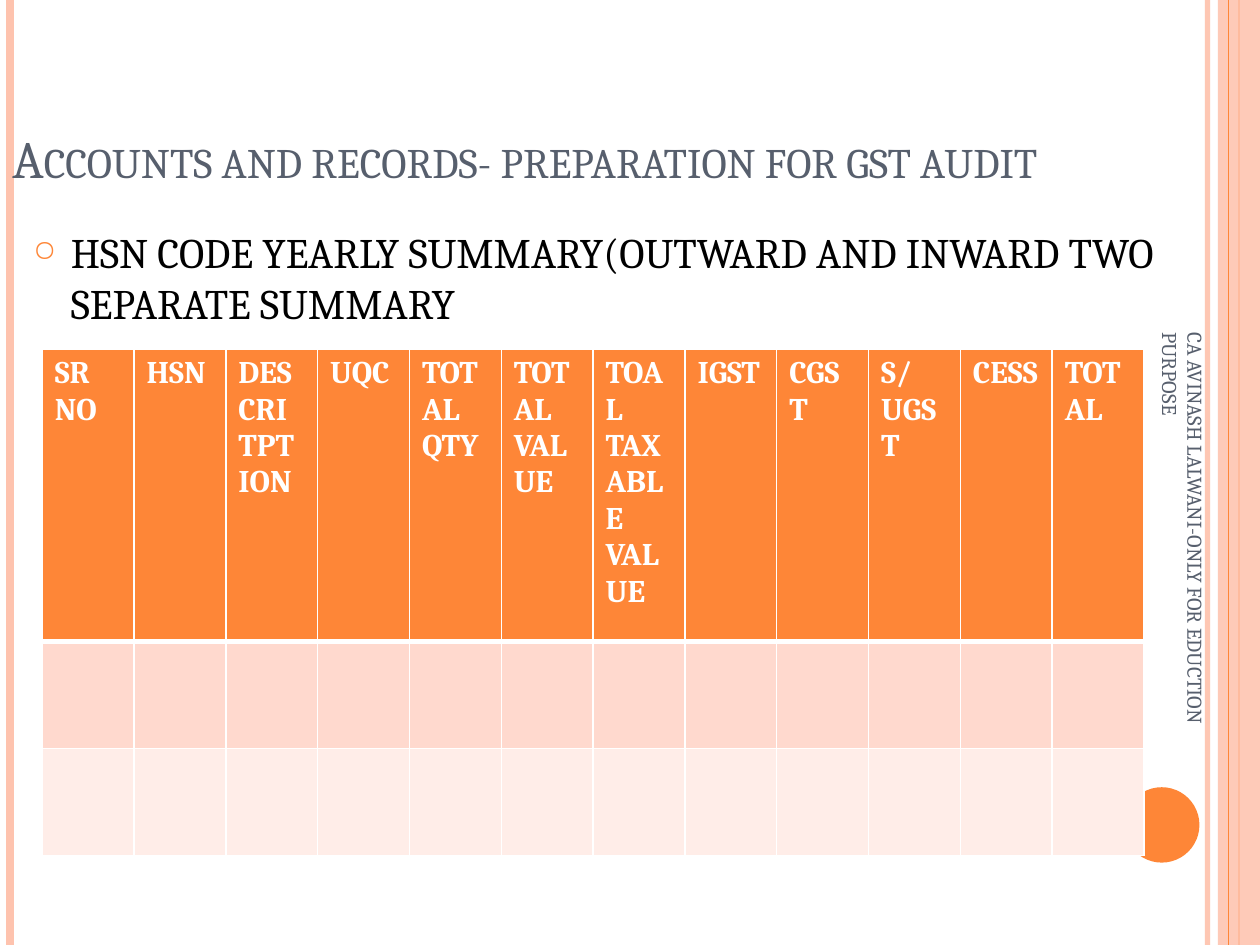
import dataclasses

import pptx
import pptx.dml.color
import pptx.enum.shapes
import pptx.enum.text
import pptx.oxml.ns
import pptx.oxml.xmlchemy
import pptx.util
from lxml import etree

Cm = pptx.util.Cm
Pt = pptx.util.Pt
ANCHOR = pptx.enum.text.MSO_ANCHOR
SHAPE = pptx.enum.shapes.MSO_SHAPE
qn = pptx.oxml.ns.qn


@dataclasses.dataclass(frozen=True)
class Theme:
    font: str = "Cambria"
    accent: str = "FE8637"
    soft: str = "FEC3AE"
    slate: str = "575F6D"
    black: str = "000000"
    white: str = "FFFFFF"
    bands: tuple = ("FFD9CE", "FFEDE8")
    title_size: int = 30
    body_size: int = 24
    table_size: int = 18
    footer_size: int = 12


THEME = Theme()
WIDTH, HEIGHT = 25.4, 19.05
HEADINGS = ["SR NO", "HSN", "DESCRITPTION", "UQC", "TOTAL\nQTY", "TOTAL VALUE",
            "TOAL TAXABLE VALUE", "IGST", "CGST", "S/UGST", "CESS", "TOTAL"]


def rgb(value):
    return pptx.dml.color.RGBColor.from_string(value)


def add_child(parent, tag, **attributes):
    child = etree.SubElement(parent, qn(tag))
    for name, value in attributes.items():
        child.set(name, str(value))
    return child


def set_opacity(fill_parent, percent):
    color = fill_parent.find(".//" + qn("a:srgbClr"))
    add_child(color, "a:alpha", val=percent * 1000)


def write_text(frame, text, size, color, bold=False, small_caps=False):
    """Fill a text frame, one paragraph per line of text."""
    frame.word_wrap = True
    for index, line in enumerate(text.split("\n")):
        para = frame.paragraphs[0] if index == 0 else frame.add_paragraph()
        span = para.add_run()
        span.text = line
        span.font.name = THEME.font
        span.font.size = Pt(size)
        span.font.bold = bold
        span.font.color.rgb = rgb(color)
        if small_caps:
            span.font._element.set("cap", "small")
    return frame.paragraphs[0]


def add_box(page, left, top, width, height, anchor=ANCHOR.TOP):
    box = page.shapes.add_textbox(Cm(left), Cm(top), Cm(width), Cm(height))
    box.text_frame.vertical_anchor = anchor
    return box


def add_rule(page, x, top, height, color, weight, opacity=None):
    rule = page.shapes.add_connector(
        pptx.enum.shapes.MSO_CONNECTOR.STRAIGHT,
        Cm(x), Cm(top), Cm(x), Cm(top + height))
    rule.line.color.rgb = rgb(color)
    rule.line.width = Pt(weight)
    add_child(rule._element.spPr, "a:effectLst")
    if opacity:
        set_opacity(rule._element.spPr, opacity)
    return rule


def add_solid(page, kind, left, top, width, height, color):
    shape = page.shapes.add_shape(kind, Cm(left), Cm(top), Cm(width), Cm(height))
    shape.shadow.inherit = False
    shape.fill.solid()
    shape.fill.fore_color.rgb = rgb(color)
    shape.line.fill.background()
    return shape


def add_frame(page, left, top, width, height):
    """Vertical rules, side band and disc around the page."""
    right = left + width
    add_rule(page, right - 1.06, top, height, THEME.soft, 3, opacity=93)
    add_rule(page, left + 0.2, top, height, THEME.soft, 4.5)
    center_rule = add_rule(page, right - 0.42, top, height, THEME.accent, 1.5)
    band = add_solid(page, SHAPE.RECTANGLE, right - 0.85, top, 0.85, height,
                     THEME.soft)
    set_opacity(band._element.spPr, 87)
    center_rule.begin_connect(band, 0)
    center_rule.end_connect(band, 2)
    add_rule(page, right - 0.64, top, height, THEME.accent, 0.75)
    add_solid(page, SHAPE.OVAL, right - 2.74, top + 15.87, 1.52, 1.52, THEME.accent)


def add_title(page, left, top, width, height):
    box = add_box(page, left, top, width, height, ANCHOR.BOTTOM)
    write_text(box.text_frame, "Accounts and records- preparation for gst audit",
               THEME.title_size, THEME.slate, small_caps=True)


def add_body(page, left, top, width, height):
    box = add_box(page, left, top, width, height)
    para = write_text(
        box.text_frame,
        "HSN CODE YEARLY SUMMARY(OUTWARD AND INWARD TWO SEPARATE SUMMARY",
        THEME.body_size, THEME.black)
    para.space_before = Pt(6)
    layout = para._p.get_or_add_pPr()
    layout.set("marL", str(Cm(0.76)))
    layout.set("indent", str(-Cm(0.76)))
    add_child(add_child(layout, "a:buClr"), "a:srgbClr", val=THEME.accent)
    add_child(layout, "a:buSzPct", val=70000)
    add_child(layout, "a:buChar", char="○")


def add_footer(page, left, top, width, height):
    """Text turned a quarter, inside the upright box given."""
    shift = (height - width) / 2
    box = add_box(page, left - shift, top + shift, height, width, ANCHOR.MIDDLE)
    box.rotation = 90
    write_text(box.text_frame, "CA AVINASH LALWANI-ONLY FOR EDUCTION PURPOSE",
               THEME.footer_size, THEME.slate)


def style_cell(cell, fill, top_weight, bottom_weight):
    layout = cell._tc.get_or_add_tcPr()
    weights = {"a:lnL": 1, "a:lnR": 1, "a:lnT": top_weight, "a:lnB": bottom_weight}
    for tag, weight in weights.items():
        border = add_child(layout, tag, w=Pt(weight))
        add_child(add_child(border, "a:solidFill"), "a:srgbClr", val=THEME.white)
    cell.fill.solid()
    cell.fill.fore_color.rgb = rgb(fill)


def add_summary_table(page, left, top, width, height):
    header_height = 5.89
    band_height = (height - header_height) / len(THEME.bands)
    table = page.shapes.add_table(
        1 + len(THEME.bands), len(HEADINGS),
        Cm(left), Cm(top), Cm(width), Cm(height)).table
    table.horz_banding = False
    for column in table.columns:
        column.width = Cm(width / len(HEADINGS))
    for index, fill in enumerate((THEME.accent,) + THEME.bands):
        row = table.rows[index]
        row.height = Cm(band_height if index else header_height)
        for cell in row.cells:
            style_cell(cell, fill, 3 if index == 1 else 1, 1 if index else 3)
    for cell, heading in zip(table.rows[0].cells, HEADINGS):
        write_text(cell.text_frame, heading, THEME.table_size, THEME.white, bold=True)


def main():
    deck = pptx.Presentation()
    deck.slide_width, deck.slide_height = Cm(WIDTH), Cm(HEIGHT)
    page = deck.slides.add_slide(deck.slide_layouts[6])
    add_frame(page, 0, 0, WIDTH, HEIGHT)
    add_title(page, 0, 0.76, WIDTH, 3.18)
    add_body(page, 0.42, 4.45, 24.13, 13.55)
    add_footer(page, 23.34, 6.45, 1.02, 8.89)
    add_summary_table(page, 0.85, 7.04, 22.22, 10.21)
    deck.save("out.pptx")


if __name__ == "__main__":
    main()
